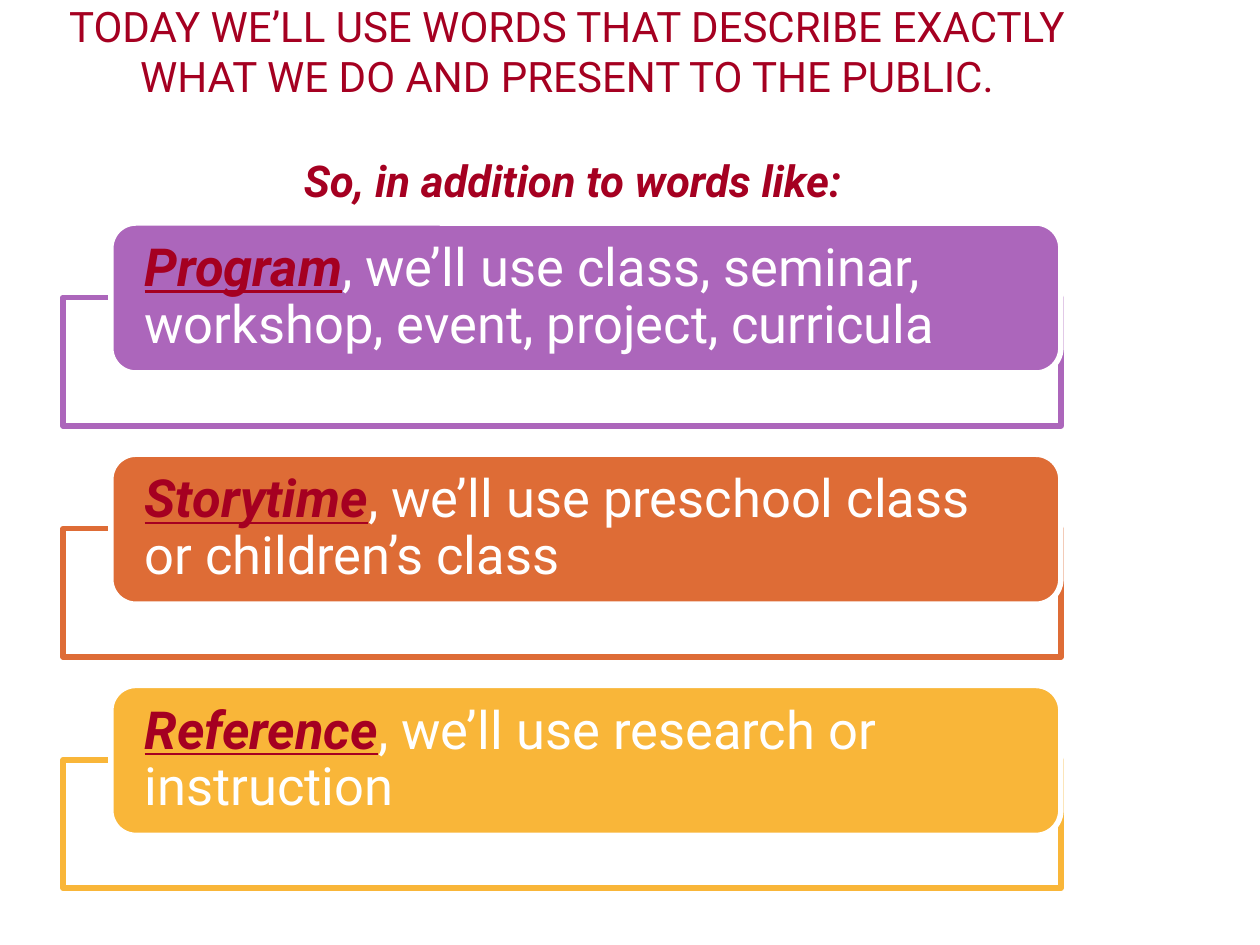
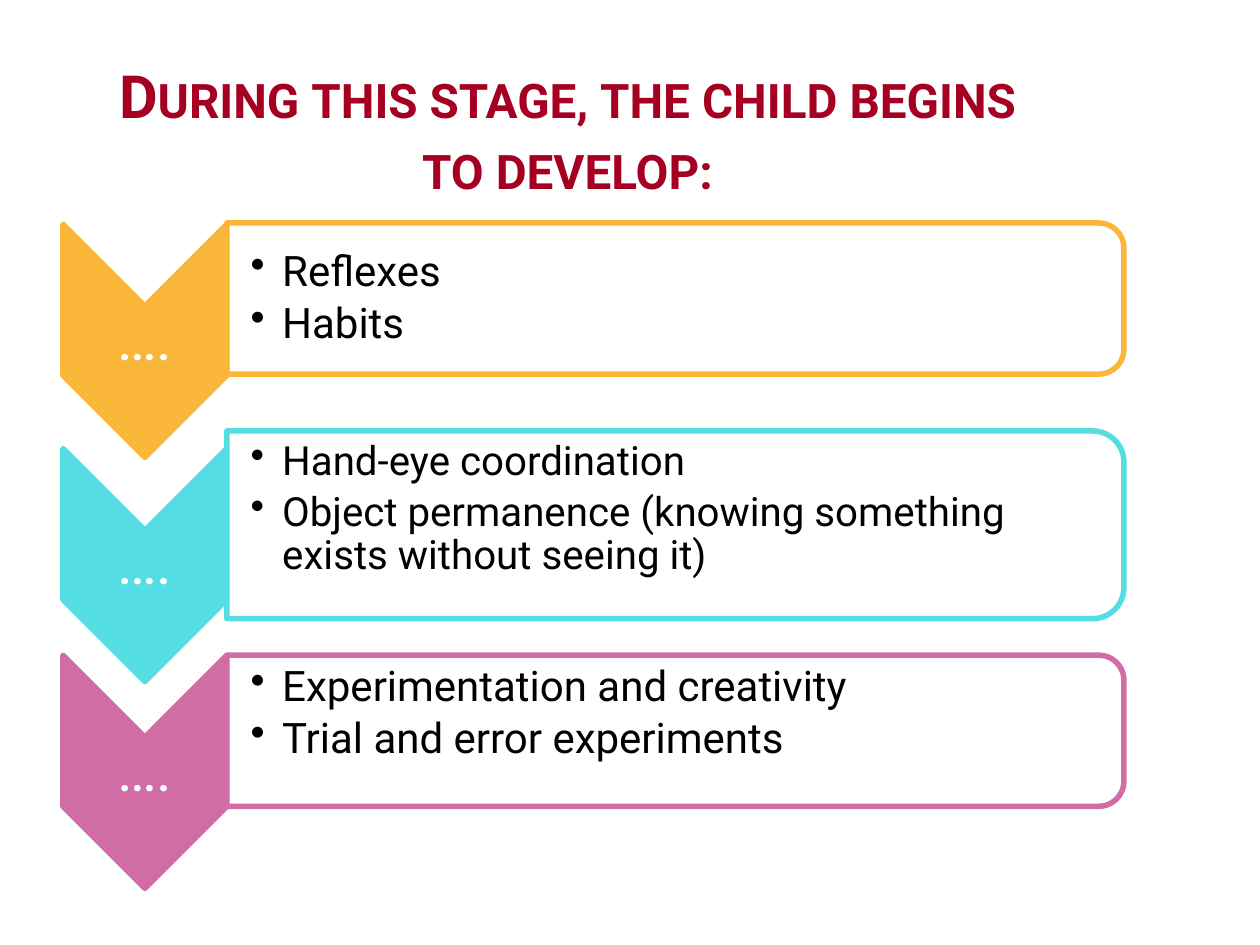
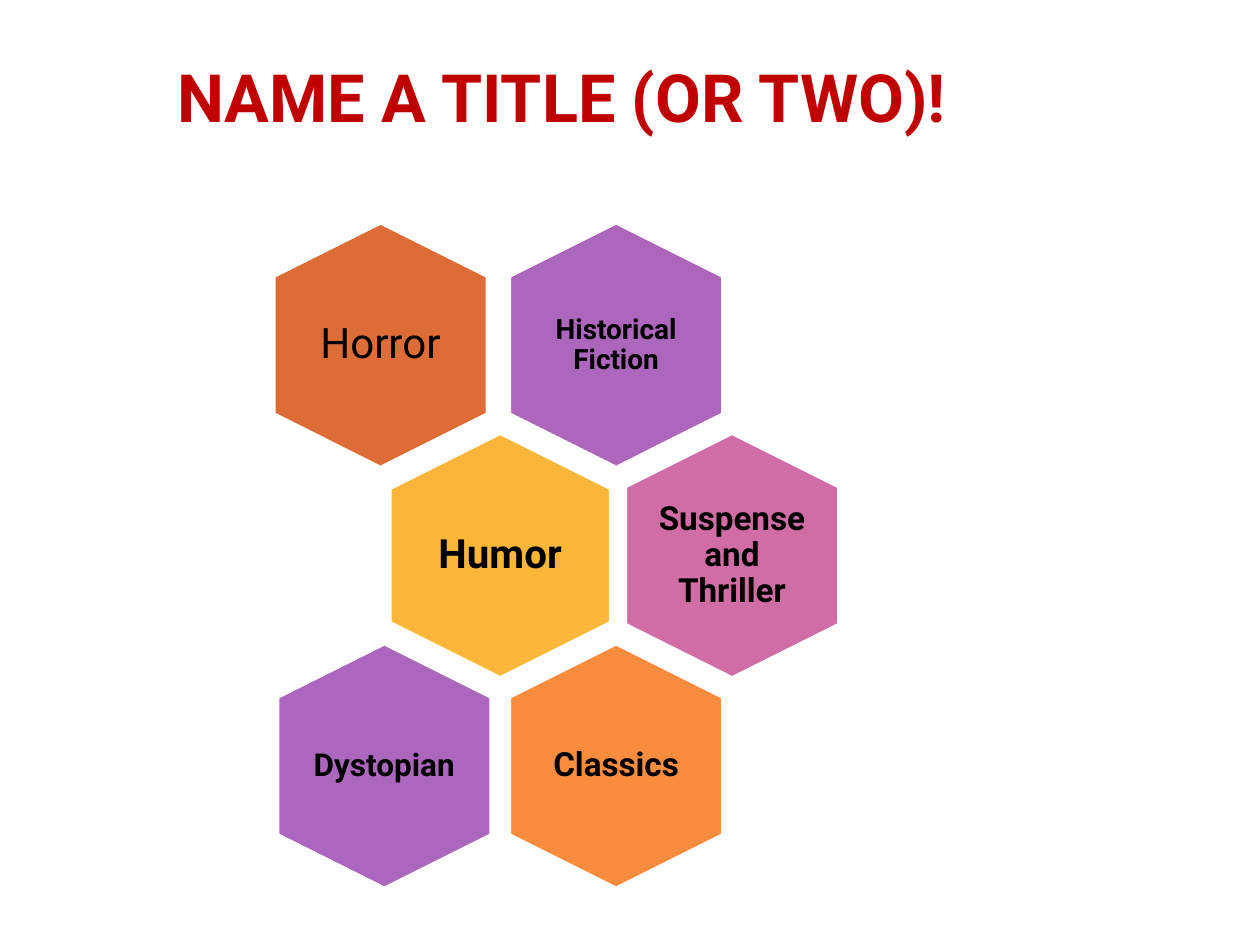
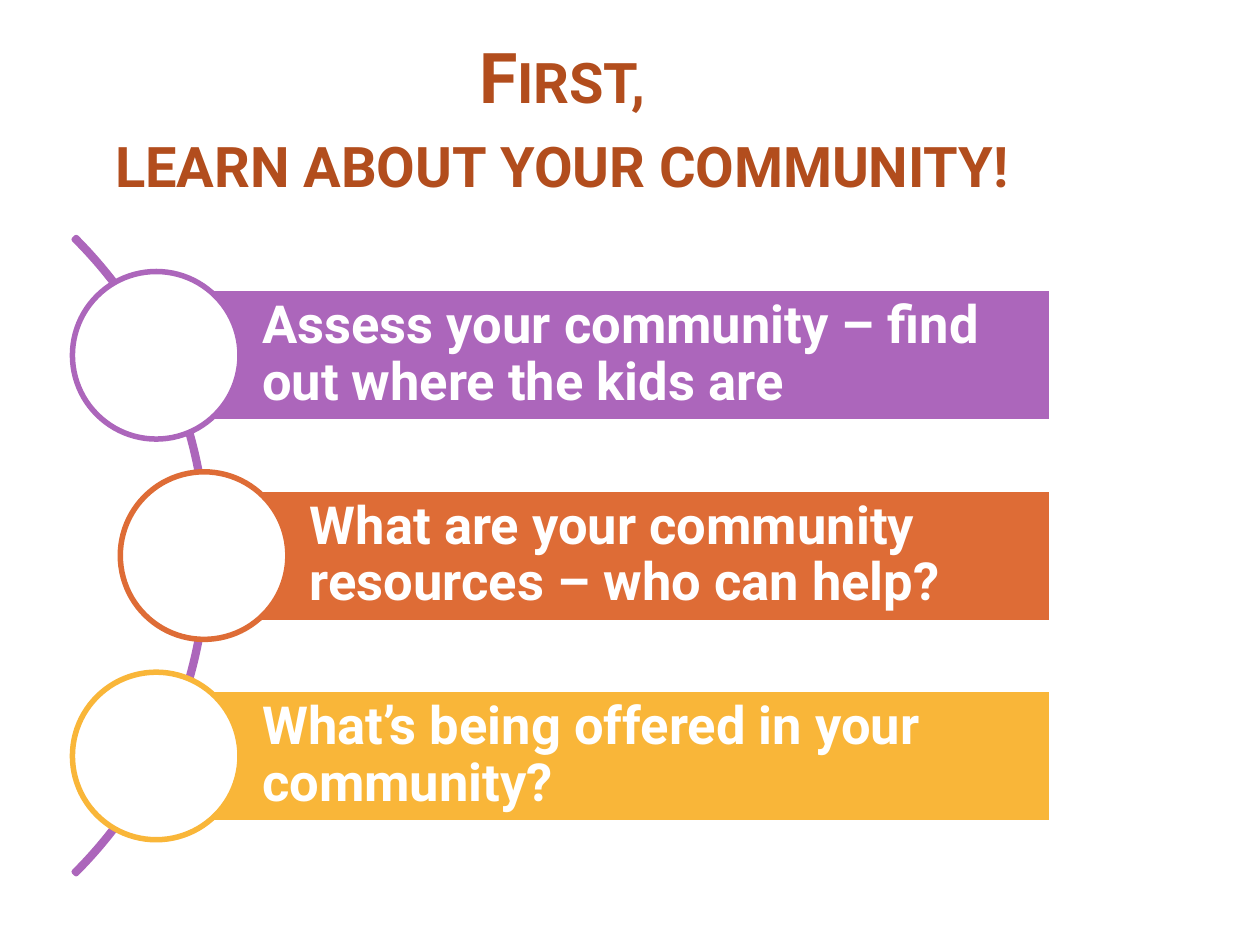
from lxml.etree import SubElement
from pptx import Presentation
from pptx.dml.color import RGBColor
from pptx.enum.shapes import MSO_SHAPE
from pptx.enum.text import MSO_ANCHOR, PP_ALIGN
from pptx.oxml.ns import qn
from pptx.util import Inches, Pt

FONT = "Roboto"
PURPLE, ORANGE, YELLOW = "AC66BB", "DE6C36", "F9B639"
PINK, AQUA, BRIGHT_ORANGE = "CF6DA4", "54DDE3", "FA8D3D"
CRIMSON, RED, RUST = "A50021", "C00000", "B24D1D"
WHITE, BLACK = "FFFFFF", "000000"
LINE_WIDTH = 3.15
TITLE_INSETS = (0.05, 0, 0.05, 0)


def rgb(color):
    return RGBColor.from_string(color)


# Shapes
def add_shape(s, kind, x, y, w, h, fill=None, line=WHITE, alpha=None):
    sp = s.shapes.add_shape(kind, Inches(x), Inches(y), Inches(w), Inches(h))
    sp.shadow.inherit = False
    sp.line.color.rgb = rgb(line)
    sp.line.width = Pt(LINE_WIDTH)
    if fill is None:
        sp.fill.background()
    else:
        sp.fill.solid()
        sp.fill.fore_color.rgb = rgb(fill)
    if alpha is not None:
        color = sp._element.spPr.find(qn("a:solidFill"))[0]
        SubElement(color, qn("a:alpha"), val=str(alpha * 1000))
    return sp


def add_turned(s, kind, x, y, w, h, fill, line, alpha=None):
    """Place a shape turned by 90 degrees so that it covers the box x, y, w, h."""
    sp = add_shape(s, kind, x + (w - h) / 2, y + (h - w) / 2, h, w, fill, line, alpha)
    sp.rotation = 90
    return sp


# Text
def set_frame(sp, insets, anchor):
    tf = sp.text_frame
    tf.word_wrap = True
    tf.vertical_anchor = anchor
    tf.margin_left, tf.margin_top, tf.margin_right, tf.margin_bottom = map(Inches, insets)
    return tf


def add_box(s, x, y, w, h, insets=(0, 0, 0, 0), anchor=MSO_ANCHOR.MIDDLE):
    sp = s.shapes.add_textbox(Inches(x), Inches(y), Inches(w), Inches(h))
    return set_frame(sp, insets, anchor)


def format_paragraph(p, align=PP_ALIGN.LEFT, spacing=0.9):
    p.alignment = align
    p.line_spacing = spacing
    return p


def add_run(p, text, size, color, bold=False, italic=False, underline=False, small_caps=False):
    r = p.add_run()
    r.text = text
    f = r.font
    f.name, f.size, f.color.rgb = FONT, Pt(size), rgb(color)
    f.bold, f.italic, f.underline = bold, italic, underline
    if small_caps:
        r._r.get_or_add_rPr().set("cap", "small")


def add_label(tf, text, size, color, align=PP_ALIGN.CENTER, bold=False):
    add_run(format_paragraph(tf.paragraphs[0], align), text, size, color, bold)


def add_title(s, box, lines, size, color, insets=TITLE_INSETS, anchor=MSO_ANCHOR.BOTTOM, **style):
    p = format_paragraph(add_box(s, *box, insets, anchor).paragraphs[0], PP_ALIGN.CENTER, 1.0)
    for i, line in enumerate(lines):
        if i:
            p.add_line_break()
        add_run(p, line, size, color, **style)


def add_bullets(tf, items, size):
    for i, item in enumerate(items):
        p = tf.paragraphs[0] if i == 0 else tf.add_paragraph()
        pPr = p._p.get_or_add_pPr()
        pPr.set("marL", str(Inches(0.25)))
        pPr.set("indent", str(-Inches(0.25)))
        SubElement(pPr, qn("a:buChar"), char="•")
        format_paragraph(p).space_after = Pt(4)
        add_run(p, item, size, BLACK)


# Slide 1: word cards
def add_word_card(s, x, y, color, word, rest):
    add_shape(s, MSO_SHAPE.RECTANGLE, x, y + 0.59, 7.92, 1.02, WHITE, color, alpha=90)
    card = add_shape(s, MSO_SHAPE.ROUNDED_RECTANGLE, x + 0.38, y, 7.54, 1.19, color)
    tf = set_frame(card, (0.21, 0, 0.21, 0), MSO_ANCHOR.MIDDLE)
    p = format_paragraph(tf.paragraphs[0])
    add_run(p, word, 30, CRIMSON, bold=True, italic=True, underline=True)
    add_run(p, rest, 30, WHITE)


def build_words(s):
    add_title(s, (0.2, 0, 8.6, 1.18),
              ["TODAY WE’LL USE WORDS THAT DESCRIBE EXACTLY WHAT WE DO AND PRESENT TO THE PUBLIC."],
              24, CRIMSON, anchor=MSO_ANCHOR.TOP)
    add_title(s, (1.92, 1.17, 5.25, 0.52), ["So, in addition to words like:"], 25, CRIMSON,
              insets=(0.1, 0.05, 0.1, 0.05), anchor=MSO_ANCHOR.TOP, bold=True, italic=True)
    cards = [
        (PURPLE, "Program", ", we’ll use class, seminar, workshop, event, project, curricula"),
        (ORANGE, "Storytime", ", we’ll use preschool class or children’s class"),
        (YELLOW, "Reference", ", we’ll use research or instruction"),
    ]
    for i, card in enumerate(cards):
        add_word_card(s, 0.5, 1.77 + 1.835 * i, *card)


# Slide 2: chevrons with bullet panels
def add_stage(s, x, chevron_y, panel_y, panel_h, color, items, size, anchor):
    chevron_w = 1.3
    add_turned(s, MSO_SHAPE.CHEVRON, x, chevron_y, chevron_w, 1.85, color, color)
    tf = add_box(s, x, chevron_y + 0.65, chevron_w, 0.56, (0.02,) * 4)
    add_label(tf, "….", 34, WHITE)

    panel_x, panel_w = x + chevron_w, 7.12
    add_turned(s, MSO_SHAPE.ROUND_2_SAME_RECTANGLE, panel_x, panel_y, panel_w, panel_h,
               WHITE, color, alpha=90)
    tf = add_box(s, panel_x, panel_y + 0.06, panel_w - 0.06, panel_h - 0.12,
                 (0.19, 0.02, 0.02, 0.02), anchor)
    add_bullets(tf, items, size)


def build_stages(s):
    add_title(s, (0.67, 0.42, 7.67, 1.25), ["During this stage, the child begins to develop:"],
              34, CRIMSON, insets=(0.1, 0.05, 0.1, 0.05), anchor=MSO_ANCHOR.TOP,
              bold=True, small_caps=True)
    stages = [
        (1.78, 1.77, 1.2, YELLOW, ["Reflexes", "Habits"], 24, MSO_ANCHOR.MIDDLE),
        (3.56, 3.42, 1.49, AQUA,
         ["Hand-eye coordination", "Object permanence (knowing something exists without seeing it)"],
         23, MSO_ANCHOR.TOP),
        (5.2, 5.2, 1.2, PINK, ["Experimentation and creativity", "Trial and error experiments"],
         24, MSO_ANCHOR.TOP),
    ]
    for stage in stages:
        add_stage(s, 0.5, *stage)


# Slide 3: hexagon cluster
def add_hexagon(s, cx, cy, w, color, genre, size, bold):
    h, text_w, text_h = 1.96, 1.2, 1.35
    sp = add_turned(s, MSO_SHAPE.HEXAGON, cx - w / 2, cy - h / 2, w, h, color, WHITE)
    sp.adjustments[0] = 0.25
    sp.adjustments[1] = 1.1547
    tf = add_box(s, cx - text_w / 2, cy - text_h / 2, text_w, text_h)
    add_label(tf, genre, size, BLACK, bold=bold)


def build_genres(s):
    add_title(s, (0.5, 0.35, 7.92, 0.73), ["NAME A TITLE (OR TWO)!"], 38, RED, bold=True)
    # centre x, row, width, colour, genre, size, bold
    genres = [
        (4.89, 0, 1.71, PURPLE, "Historical Fiction", 16, True),
        (3.02, 0, 1.71, ORANGE, "Horror", 24, False),
        (3.97, 1, 1.77, YELLOW, "Humor", 23, True),
        (5.81, 1, 1.71, PINK, "Suspense and Thriller", 19, True),
        (4.89, 2, 1.71, BRIGHT_ORANGE, "Classics", 19, True),
        (3.05, 2, 1.71, PURPLE, "Dystopian", 18, True),
    ]
    for cx, row, *rest in genres:
        add_hexagon(s, cx, 2.74 + 1.67 * row, *rest)


# Slide 4: steps along an arc
def add_step(s, x, y, right, color, text):
    h, circle = 1.06, 1.33
    bar = add_shape(s, MSO_SHAPE.RECTANGLE, x, y, right - x, h, color)
    tf = set_frame(bar, (0.84, 0.08, 0.08, 0.08), MSO_ANCHOR.MIDDLE)
    add_label(tf, text, 30, WHITE, PP_ALIGN.LEFT, bold=True)
    add_shape(s, MSO_SHAPE.OVAL, x - circle / 2, y + (h - circle) / 2, circle, circle, WHITE, color)


def build_community(s):
    add_title(s, (0.5, 0.35, 7.92, 1.25), ["First,", "learn about your community!"], 40, RUST,
              bold=True, small_caps=True)
    arc = add_shape(s, MSO_SHAPE.BLOCK_ARC, -5.49, 0.84, 7.14, 7.14, line=PURPLE)
    for i, value in enumerate((189, 27, 0.003)):
        arc.adjustments[i] = value
    steps = [
        (1.24, PURPLE, "Assess your community – find out where the kids are"),
        (1.62, ORANGE, "What are your community resources – who can help?"),
        (1.24, YELLOW, "What’s being offered in your community?"),
    ]
    for i, (x, color, text) in enumerate(steps):
        add_step(s, x, 2.29 + 1.59 * i, 8.35, color, text)


def main():
    prs = Presentation()
    prs.slide_width, prs.slide_height = Inches(10), Inches(7.5)
    for build in (build_words, build_stages, build_genres, build_community):
        build(prs.slides.add_slide(prs.slide_layouts[6]))
    prs.save("out.pptx")


if __name__ == "__main__":
    main()
